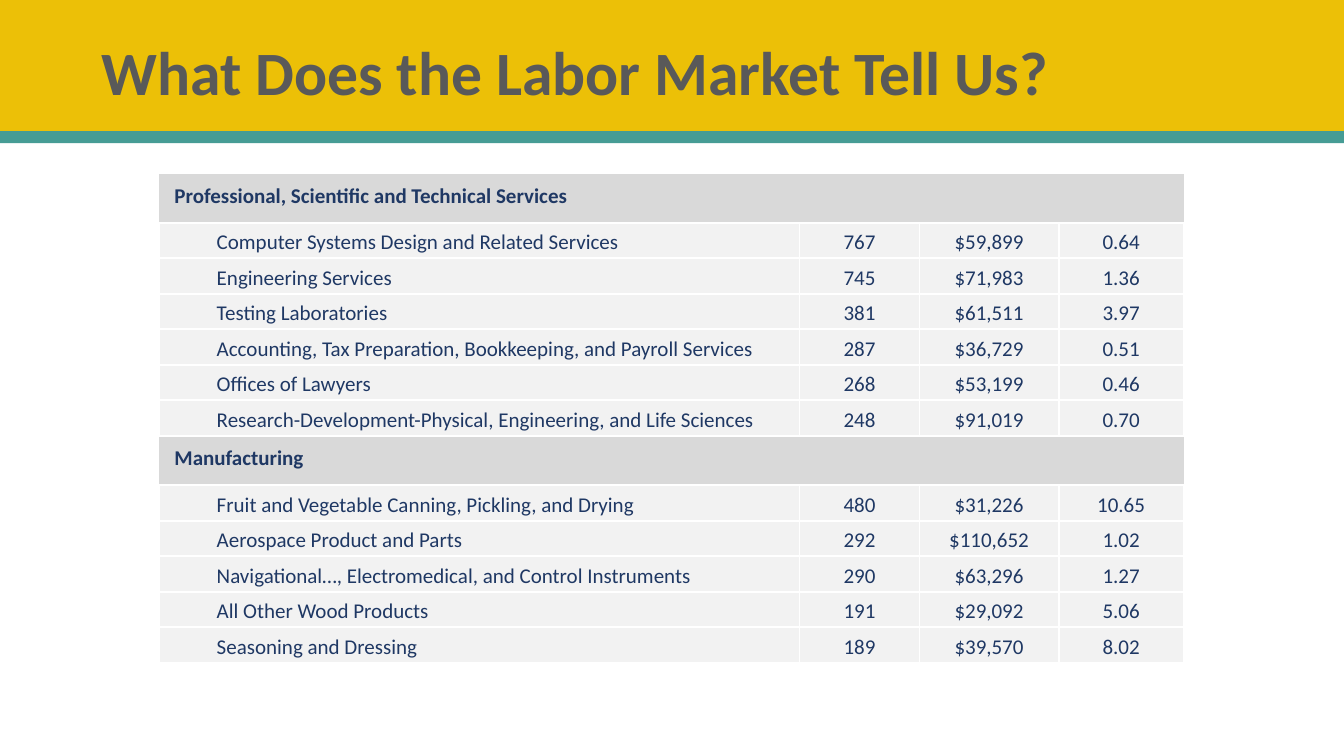
"""Build the labor market slide with its table of industries."""
from dataclasses import dataclass
from typing import Any

import lxml.etree
import pptx
import pptx.dml.color
import pptx.enum.shapes
import pptx.enum.text
import pptx.oxml.ns
import pptx.util

Inches = pptx.util.Inches
ALIGN = pptx.enum.text.PP_ALIGN
ANCHOR = pptx.enum.text.MSO_ANCHOR

COLUMN_WIDTHS = (0.45, 5.9, 1.19, 1.38, 1.24)
TABLE_LEFT, TABLE_TOP, TABLE_HEIGHT = 1.58, 1.72, 4.86
SECTOR_HEIGHT = 0.49
NAVY = "1F3864"
SECTOR_FORMAT = {
    "margin_left": Inches(0.15), "margin_right": Inches(0.15),
    "margin_top": Inches(0.08), "margin_bottom": Inches(0.08),
    "vertical_anchor": ANCHOR.TOP,
}
INDUSTRY_FORMAT = {
    "margin_left": Inches(0.12), "margin_right": Inches(0.12),
    "margin_top": Inches(0.02), "margin_bottom": Inches(0),
    "vertical_anchor": ANCHOR.MIDDLE,
}


@dataclass(frozen=True)
class Band:
    top: float
    height: float
    fill: str


@dataclass(frozen=True)
class Industry:
    name: str
    jobs: str
    wage: str
    quotient: str


@dataclass(frozen=True)
class Sector:
    name: str
    industries: tuple[Industry, ...]


BANDS = (Band(0, 1.41, "ECC007"), Band(1.3, 0.12, "469C95"))
SECTORS = (
    Sector("Professional, Scientific and Technical Services", (
        Industry("Computer Systems Design and Related Services", "767", "$59,899", "0.64"),
        Industry("Engineering Services", "745", "$71,983", "1.36"),
        Industry("Testing Laboratories", "381", "$61,511", "3.97"),
        Industry("Accounting, Tax Preparation, Bookkeeping, and Payroll Services",
                 "287", "$36,729", "0.51"),
        Industry("Offices of Lawyers", "268", "$53,199", "0.46"),
        Industry("Research-Development-Physical, Engineering, and Life Sciences",
                 "248", "$91,019", "0.70"),
    )),
    Sector("Manufacturing", (
        Industry("Fruit and Vegetable Canning, Pickling, and Drying", "480", "$31,226", "10.65"),
        Industry("Aerospace Product and Parts", "292", "$110,652", "1.02"),
        Industry("Navigational…, Electromedical, and Control Instruments",
                 "290", "$63,296", "1.27"),
        Industry("All Other Wood Products", "191", "$29,092", "5.06"),
        Industry("Seasoning and Dressing", "189", "$39,570", "8.02"),
    )),
)


def color(value: str) -> pptx.dml.color.RGBColor:
    return pptx.dml.color.RGBColor.from_string(value)


def apply(target: Any, values: dict[str, Any]) -> None:
    for name, value in values.items():
        setattr(target, name, value)


def write(para: Any, text: str, size: int, ink: str, bold: bool,
          spacing: float, align: Any = ALIGN.LEFT) -> None:
    apply(para, {"alignment": align, "line_spacing": spacing})
    span = para.add_run()
    span.text = text
    apply(span.font, {"name": "Calibri", "size": pptx.util.Pt(size), "bold": bold})
    span.font.color.rgb = color(ink)


def add_band(page: Any, band: Band, width: int) -> None:
    box = page.shapes.add_shape(pptx.enum.shapes.MSO_SHAPE.RECTANGLE, 0,
                                Inches(band.top), width, Inches(band.height))
    box.shadow.inherit = False
    box.fill.solid()
    box.fill.fore_color.rgb = color(band.fill)
    box.line.fill.background()


def style_cell(cell: Any, fill: str, values: dict[str, Any], open_sides: str) -> None:
    qn = pptx.oxml.ns.qn
    apply(cell, values)
    properties = cell._tc.get_or_add_tcPr()
    for side in "LRTB":
        edge = lxml.etree.SubElement(properties, qn(f"a:ln{side}"), w="19050")
        if side in open_sides:
            lxml.etree.SubElement(edge, qn("a:noFill"))
        else:
            paint = lxml.etree.SubElement(edge, qn("a:solidFill"))
            lxml.etree.SubElement(paint, qn("a:srgbClr"), val="FFFFFF")
    cell.fill.solid()
    cell.fill.fore_color.rgb = color(fill)


def fill_sector_row(table: Any, row: int, sector: Sector) -> None:
    table.rows[row].height = Inches(SECTOR_HEIGHT)
    for column in range(len(COLUMN_WIDTHS)):
        style_cell(table.cell(row, column), "D9D9D9", SECTOR_FORMAT, "LR")
    first = table.cell(row, 0)
    first.merge(table.cell(row, len(COLUMN_WIDTHS) - 1))
    write(first.text_frame.paragraphs[0], sector.name, 15, NAVY, True, 1.07)


def fill_industry_row(table: Any, row: int, industry: Industry, height: float) -> None:
    table.rows[row].height = Inches(height)
    texts = ("", industry.name, industry.jobs, industry.wage, industry.quotient)
    for column, text in enumerate(texts):
        cell = table.cell(row, column)
        style_cell(cell, "F2F2F2", INDUSTRY_FORMAT, {0: "R", 1: "L"}.get(column, ""))
        if text:
            align = ALIGN.CENTER if column > 1 else ALIGN.LEFT
            write(cell.text_frame.paragraphs[0], text, 15, NAVY, False, 1.07, align)


def add_industry_table(page: Any) -> None:
    industry_count = sum(len(sector.industries) for sector in SECTORS)
    industry_height = (TABLE_HEIGHT - SECTOR_HEIGHT * len(SECTORS)) / industry_count
    table = page.shapes.add_table(
        industry_count + len(SECTORS), len(COLUMN_WIDTHS), Inches(TABLE_LEFT),
        Inches(TABLE_TOP), Inches(sum(COLUMN_WIDTHS)), Inches(TABLE_HEIGHT)).table
    apply(table, {"first_row": False, "horz_banding": False})
    for column, width in zip(table.columns, COLUMN_WIDTHS):
        column.width = Inches(width)
    row = 0
    for sector in SECTORS:
        fill_sector_row(table, row, sector)
        for row, industry in enumerate(sector.industries, row + 1):
            fill_industry_row(table, row, industry, industry_height)
        row += 1


def add_title(page: Any) -> None:
    box = page.shapes.add_textbox(Inches(0.91), Inches(0.02), Inches(11.5), Inches(1.45))
    apply(box.text_frame, {"word_wrap": True, "vertical_anchor": ANCHOR.MIDDLE})
    write(box.text_frame.paragraphs[0], "What Does the Labor Market Tell Us?",
          44, "595959", True, 0.9)


def main() -> None:
    deck = pptx.Presentation()
    apply(deck, {"slide_width": Inches(13.33), "slide_height": Inches(7.5)})
    page = deck.slides.add_slide(deck.slide_layouts[6])
    for band in BANDS:
        add_band(page, band, deck.slide_width)
    add_industry_table(page)
    add_title(page)
    deck.save("out.pptx")


if __name__ == "__main__":
    main()
